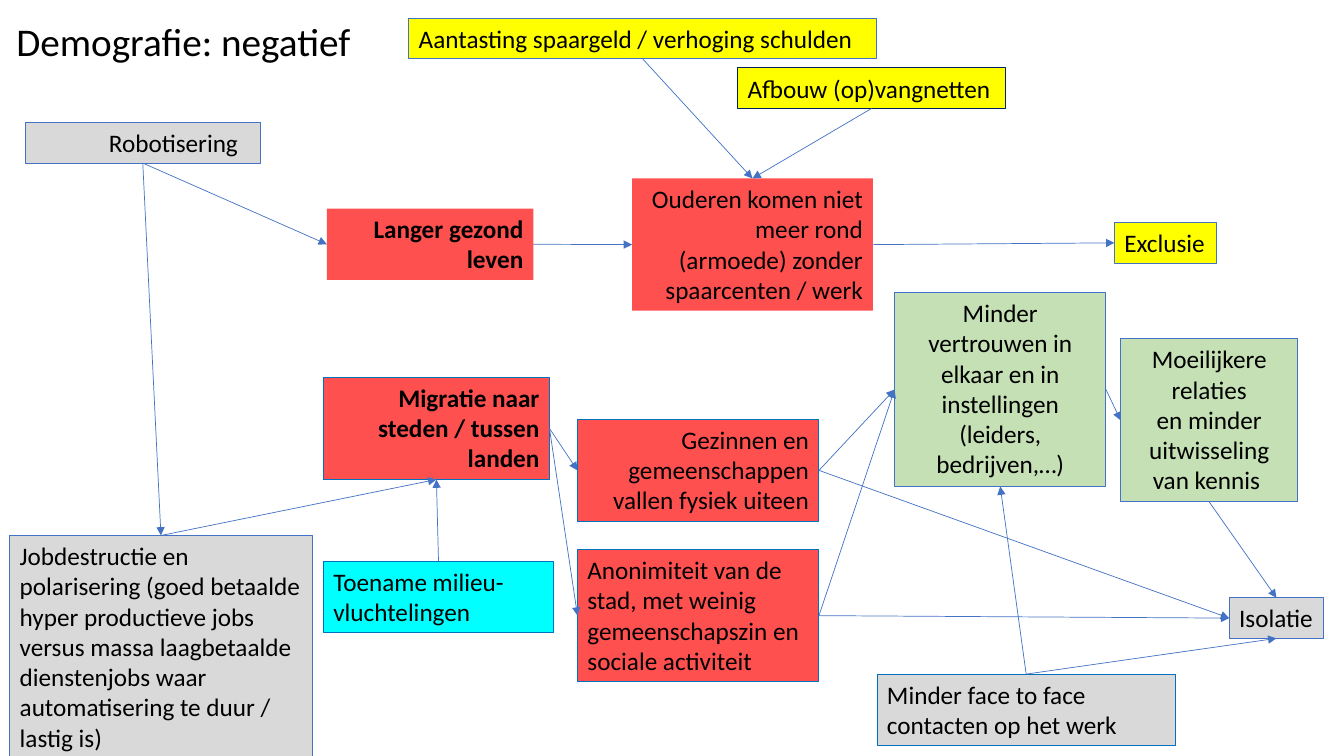
"""Build the slide on negative demographic effects as a cause-and-effect diagram."""
import dataclasses

import lxml.etree
import pptx
import pptx.dml.color
import pptx.enum.shapes
import pptx.enum.text
import pptx.oxml.ns
import pptx.util

Pt = pptx.util.Pt
ALIGN = pptx.enum.text.PP_ALIGN
ANCHOR = pptx.enum.text.MSO_ANCHOR
TOP, LEFT, BOTTOM, RIGHT = range(4)


@dataclasses.dataclass(frozen=True)
class Theme:
    """Colours, font and sizes of the slide."""
    font: str = "Calibri"
    title_size: float = 28
    body_size: float = 18
    box_line: float = 0.75
    arrow_line: float = 0.5
    text: str = "000000"
    red: str = "FF5050"
    yellow: str = "FFFF00"
    cyan: str = "00FFFF"
    grey: str = "D9D9D9"
    green: str = "C5E0B4"
    blue: str = "4472C4"
    deep_blue: str = "0070C0"
    navy: str = "002060"


THEME = Theme()

FACTORS = {
    "langer": ("Langer gezond leven", (233.5, 149, 147.5, 51),
               THEME.red, None, ALIGN.RIGHT),
    "ouderen": ("Ouderen komen niet meer rond (armoede) zonder spaarcenten / werk",
                (451.5, 127.5, 172, 94.5), THEME.red, None, ALIGN.RIGHT),
    "exclusie": ("Exclusie", (796, 159, 73, 29),
                 THEME.yellow, THEME.blue, ALIGN.LEFT),
    "milieu": ("Toename milieu-vluchtelingen", (231, 401, 164.5, 51),
               THEME.cyan, THEME.deep_blue, ALIGN.LEFT),
    "jobs": ("Jobdestructie en polarisering (goed betaalde hyper productieve jobs "
             "versus massa laagbetaalde dienstenjobs waar automatisering te duur / "
             "lastig is)", (7, 382.5, 216, 160),
             THEME.grey, THEME.blue, ALIGN.LEFT),
    "robotisering": ("Robotisering", (18, 87.5, 168, 29),
                     THEME.grey, THEME.blue, ALIGN.RIGHT),
    "migratie": ("Migratie naar steden / tussen landen", (231, 269.5, 161.5, 73),
                 THEME.red, THEME.deep_blue, ALIGN.RIGHT),
    "gezinnen": ("Gezinnen en gemeenschappen vallen fysiek uiteen",
                 (412.5, 299.5, 172.5, 73), THEME.red, THEME.deep_blue, ALIGN.RIGHT),
    "anonimiteit": ("Anonimiteit van de stad, met weinig gemeenschapszin en "
                    "sociale activiteit", (412.5, 392.5, 172.5, 94.5),
                    THEME.red, THEME.deep_blue, ALIGN.LEFT),
    "vertrouwen": ("Minder vertrouwen in elkaar en in instellingen (leiders, "
                   "bedrijven,…)", (639, 209, 151, 138.5),
                   THEME.green, THEME.blue, ALIGN.CENTER),
    "relaties": ("Moeilijkere relaties\nen minder uitwisseling van kennis ",
                 (800.5, 242, 126.5, 116.5), THEME.green, THEME.blue, ALIGN.CENTER),
    "isolatie": ("Isolatie", (878, 427, 67.5, 29),
                 THEME.grey, THEME.blue, ALIGN.LEFT),
    "contacten": ("Minder face to face contacten op het werk",
                  (626.5, 481.5, 213, 51), THEME.grey, THEME.deep_blue, ALIGN.LEFT),
    "vangnetten": ("Afbouw (op)vangnetten", (527, 48.5, 191, 29),
                   THEME.yellow, THEME.navy, ALIGN.LEFT),
    "spaargeld": ("Aantasting spaargeld / verhoging schulden", (292, 13, 334, 29),
                  THEME.yellow, THEME.blue, ALIGN.LEFT),
}
MAIN_TRENDS = ("langer", "migratie")
TIGHT_LABELS = ("exclusie", "isolatie")

EFFECTS = [
    ("langer", RIGHT, "ouderen", LEFT),
    ("ouderen", RIGHT, "exclusie", LEFT),
    ("milieu", TOP, "migratie", BOTTOM),
    ("jobs", TOP, "migratie", BOTTOM),
    ("robotisering", BOTTOM, "langer", LEFT),
    ("robotisering", BOTTOM, "jobs", TOP),
    ("migratie", RIGHT, "gezinnen", LEFT),
    ("migratie", RIGHT, "anonimiteit", LEFT),
    ("gezinnen", RIGHT, "vertrouwen", LEFT),
    ("anonimiteit", RIGHT, "vertrouwen", LEFT),
    ("vertrouwen", RIGHT, "relaties", LEFT),
    ("relaties", BOTTOM, "isolatie", TOP),
    ("contacten", TOP, "isolatie", BOTTOM),
    ("contacten", TOP, "vertrouwen", BOTTOM),
    ("anonimiteit", RIGHT, "isolatie", LEFT),
    ("gezinnen", RIGHT, "isolatie", LEFT),
    ("vangnetten", BOTTOM, "ouderen", TOP),
    ("spaargeld", BOTTOM, "ouderen", TOP),
]


def rgb(colour):
    """Return the colour object for a hex value."""
    return pptx.dml.color.RGBColor.from_string(colour)


def format_text(frame, size, align, bold=False):
    """Give every paragraph and run of a frame the same look."""
    for paragraph in frame.paragraphs:
        paragraph.alignment = align
        for run in paragraph.runs:
            run.font.name = THEME.font
            run.font.size = Pt(size)
            run.font.bold = bold
            run.font.color.rgb = rgb(THEME.text)


def set_title(slide, wording):
    """Place and format the title."""
    title = slide.shapes.title
    title.left, title.top, title.width, title.height = map(Pt, (4.5, -21, 828, 104.5))
    frame = title.text_frame
    frame.text = wording
    frame.vertical_anchor = ANCHOR.MIDDLE
    frame.paragraphs[0].line_spacing = 0.9
    format_text(frame, THEME.title_size, ALIGN.LEFT)


def add_factor(slide, wording, place, fill, outline, align, bold, wrap):
    """Add one box of the diagram."""
    factor = slide.shapes.add_shape(
        pptx.enum.shapes.MSO_SHAPE.RECTANGLE, *map(Pt, place))
    factor.shadow.inherit = False
    factor.fill.solid()
    factor.fill.fore_color.rgb = rgb(fill)
    if outline:
        factor.line.color.rgb = rgb(outline)
        factor.line.width = Pt(THEME.box_line)
    else:
        factor.line.fill.background()
    frame = factor.text_frame
    frame.text = wording
    frame.word_wrap = wrap
    frame.vertical_anchor = ANCHOR.TOP
    format_text(frame, THEME.body_size, align, bold)
    return factor


def add_effect(slide, cause, cause_side, result, result_side):
    """Join two boxes with an arrow."""
    effect = slide.shapes.add_connector(
        pptx.enum.shapes.MSO_CONNECTOR.STRAIGHT, 0, 0, 0, 0)
    effect.begin_connect(cause, cause_side)
    effect.end_connect(result, result_side)
    effect.line.color.rgb = rgb(THEME.blue)
    effect.line.width = Pt(THEME.arrow_line)
    qn = pptx.oxml.ns.qn
    properties = effect.element.spPr
    outline = properties.find(qn("a:ln"))
    lxml.etree.SubElement(outline, qn("a:tailEnd")).set("type", "triangle")
    lxml.etree.SubElement(properties, qn("a:effectLst"))


def main():
    """Build and save the slide."""
    deck = pptx.Presentation()
    deck.slide_width, deck.slide_height = Pt(960), Pt(540)
    slide = deck.slides.add_slide(deck.slide_layouts[5])
    set_title(slide, "Demografie: negatief")
    factors = {
        key: add_factor(slide, *details, key in MAIN_TRENDS, key not in TIGHT_LABELS)
        for key, details in FACTORS.items()
    }
    factors["robotisering"].text_frame.margin_right = Pt(16)
    for cause, cause_side, result, result_side in EFFECTS:
        add_effect(slide, factors[cause], cause_side, factors[result], result_side)
    deck.save("out.pptx")


if __name__ == "__main__":
    main()
